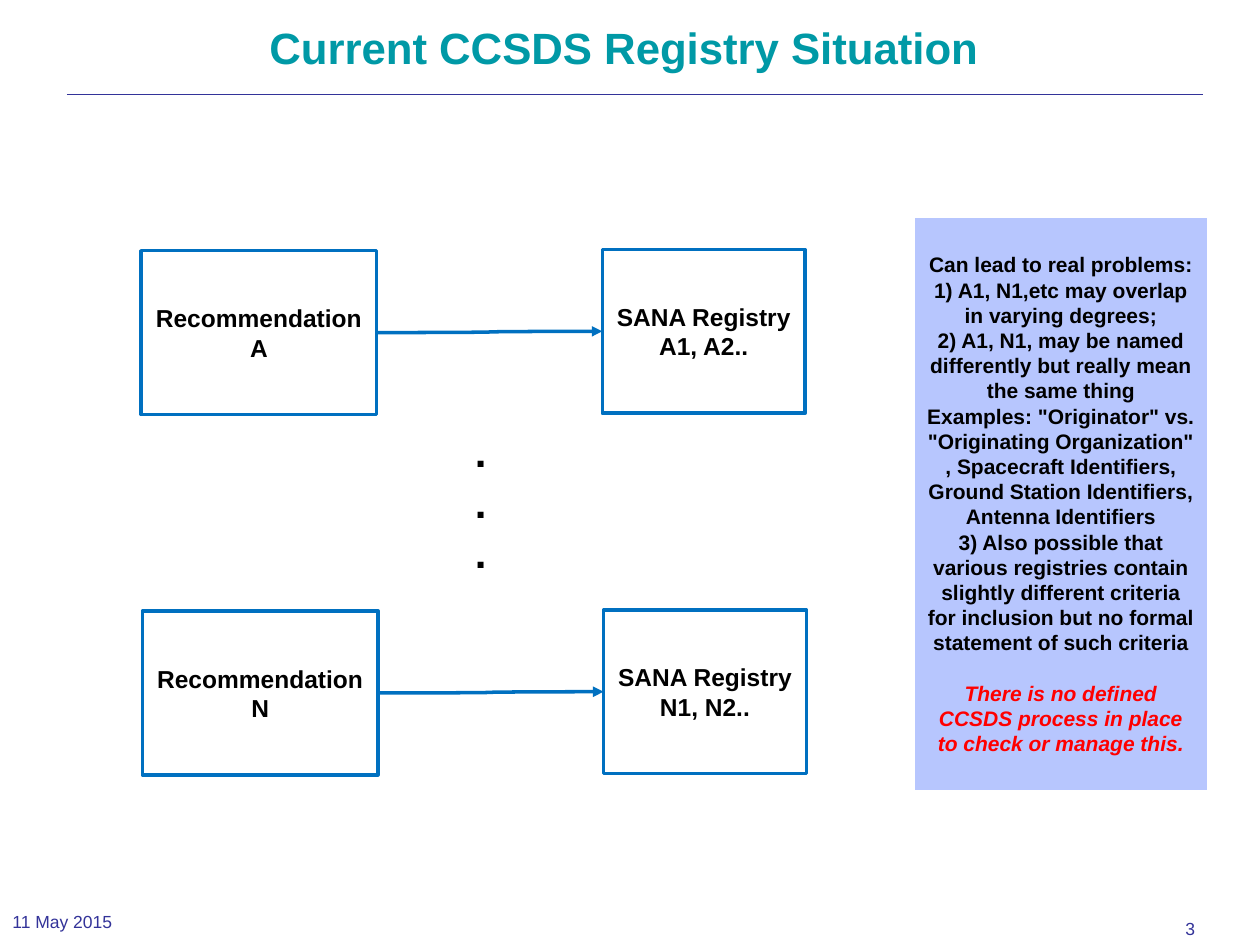
from dataclasses import dataclass
from lxml.etree import SubElement as Sub
from pptx import Presentation
from pptx.dml.color import RGBColor as RGB
from pptx.enum.shapes import MSO_CONNECTOR as Link, MSO_SHAPE as Shape
from pptx.enum.text import MSO_ANCHOR as Anchor, PP_ALIGN as Align
from pptx.oxml.ns import qn
from pptx.util import Inches, Pt


@dataclass(frozen=True)
class Theme:
    font: str = "Arial"
    teal: RGB = RGB(0x00, 0x99, 0xA6)
    navy: RGB = RGB(0x33, 0x33, 0x99)
    blue: RGB = RGB(0x00, 0x70, 0xC0)
    pale: RGB = RGB(0xB7, 0xC6, 0xFE)
    white: RGB = RGB(0xFF, 0xFF, 0xFF)
    black: RGB = RGB(0, 0, 0)
    red: RGB = RGB(0xFF, 0, 0)
    title: int = 25
    dots: int = 24
    box: int = 14
    note: int = 12
    foot: int = 10


theme = Theme()


def write(frame, lines, size, color, bold=True, align=Align.CENTER, anchor=Anchor.MIDDLE):
    frame.word_wrap = True
    frame.vertical_anchor = anchor
    for i, line in enumerate(lines):
        para = frame.paragraphs[0] if i == 0 else frame.add_paragraph()
        para.alignment = align
        run = para.add_run()
        run.text = line
        font = run.font
        font.name, font.size, font.bold = theme.font, Pt(size), bold
        font.color.rgb = color
    return para


def style(line, color, width):
    line.line.color.rgb = color
    line.line.width = Pt(width)
    Sub(line._element.spPr, qn("a:effectLst"))


deck = Presentation()
deck.slide_width, deck.slide_height = Inches(10), Inches(7.5)
slide = deck.slides.add_slide(deck.slide_layouts[5])
shapes = slide.shapes

rule = shapes.add_connector(Link.STRAIGHT, Inches(0.53), Inches(0.75), Inches(9.55), Inches(0.75))
style(rule, theme.navy, 0.13)

title = shapes.title
title.left, title.top = Inches(0.64), Inches(0.16)
title.width, title.height = Inches(8.62), Inches(1.09)
head = write(title.text_frame, ["Current CCSDS Registry Situation"], theme.title, theme.teal, anchor=Anchor.TOP)
head.line_spacing = 0.9

rows = [
    [("Recommendation A", 1.12, 1.99, 1.87), ("SANA Registry A1, A2..", 4.78, 1.98, 1.61)],
    [("Recommendation N", 1.13, 4.85, 1.87), ("SANA Registry N1, N2..", 4.79, 4.84, 1.61)],
]
for row in rows:
    pair = []
    for text, x, y, width in row:
        box = shapes.add_shape(Shape.FLOWCHART_PROCESS, Inches(x), Inches(y), Inches(width), Inches(1.3))
        box.shadow.inherit = False
        box.fill.solid()
        box.fill.fore_color.rgb = theme.white
        box.line.color.rgb = theme.blue
        box.line.width = Pt(2)
        write(box.text_frame, [text], theme.box, theme.black)
        pair.append(box)
    arrow = shapes.add_connector(Link.CURVE, 0, 0, 0, 0)
    arrow.begin_connect(pair[0], 3)
    arrow.end_connect(pair[1], 1)
    style(arrow, theme.blue, 2)
    Sub(arrow.line._get_or_add_ln(), qn("a:tailEnd"), type="triangle")

note = shapes.add_shape(Shape.FLOWCHART_PROCESS, Inches(7.26), Inches(1.73), Inches(2.32), Inches(4.54))
note.shadow.inherit = False
note.fill.solid()
note.fill.fore_color.rgb = theme.pale
note.line.fill.background()
last = write(note.text_frame, [
    "Can lead to real problems:",
    "1) A1, N1,etc may overlap in varying degrees;",
    "2) A1, N1, may be named differently but really mean the same thing",
    'Examples: "Originator" vs. "Originating Organization" , Spacecraft Identifiers,',
    "Ground Station Identifiers,",
    "Antenna Identifiers",
    "3) Also possible that various registries contain slightly different criteria "
    "for inclusion but no formal statement of such criteria",
    "There is no defined CCSDS process in place to check or manage this.",
], theme.note, theme.black)
last.space_before = Pt(14.4)
last.runs[0].font.color.rgb = theme.red
last.runs[0].font.italic = True

labels = [
    (["11 May 2015"], 0, 7.17, 1.89, 0.29, theme.foot, theme.navy, False, Anchor.MIDDLE),
    (["3"], 9.31, 7.24, 0.35, 0.26, theme.foot, theme.navy, False, Anchor.TOP),
    (["."] * 3, 3.67, 3.33, 0.3, 1.72, theme.dots, theme.black, True, Anchor.TOP),
]
for lines, x, y, width, height, size, color, bold, anchor in labels:
    label = shapes.add_textbox(Inches(x), Inches(y), Inches(width), Inches(height))
    write(label.text_frame, lines, size, color, bold, Align.LEFT, anchor)

deck.save("out.pptx")
